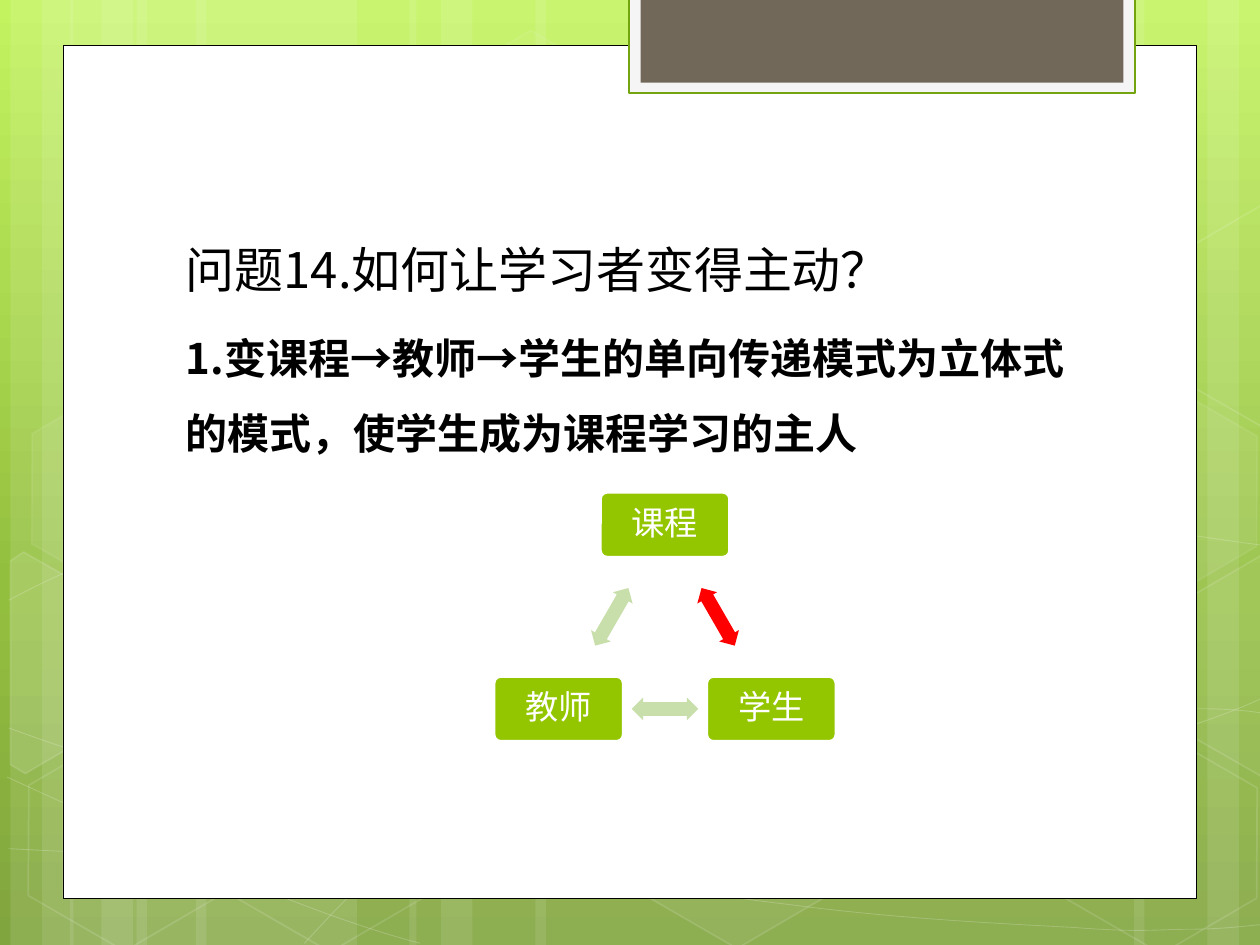
import math

import lxml.etree
import pptx
import pptx.dml.color
import pptx.enum.shapes
import pptx.enum.text
import pptx.oxml
import pptx.oxml.ns
import pptx.util

Pt = pptx.util.Pt
RGBColor = pptx.dml.color.RGBColor
SHAPE = pptx.enum.shapes.MSO_SHAPE
qn = pptx.oxml.ns.qn

WHITE = RGBColor(0xFF, 0xFF, 0xFF)
BLACK = RGBColor(0, 0, 0)
OFF_WHITE = RGBColor(0xF5, 0xF5, 0xF5)
TAUPE = RGBColor(0x71, 0x68, 0x5A)
DARK_GREEN = RGBColor(0x74, 0xA5, 0x10)
GREEN = RGBColor(0x94, 0xC6, 0x00)
PALE_GREEN = RGBColor(0xC8, 0xDF, 0xAB)
RED = RGBColor(0xFF, 0, 0)
SKY = [(0, RGBColor(0xC3, 0xF3, 0x5F)), (62, RGBColor(0x93, 0xBF, 0x3F)),
       (100, RGBColor(0x81, 0xA5, 0x3E))]
TEXT_FONT = "Noto Sans CJK SC"
NODE_FONT = "League Spartan"

BARS = [(78, 126), (6, 36), (24, 60), (112, 126), (40, 36), (58, 60),
        (528, 126), (690, 36), (648, 60), (306, 222), (234, 36), (252, 60)]
WAVES = [
    [(5, 485), (44, 487), (83, 489), (137, 488), (191, 487), (258, 486), (330, 479),
     (402, 472), (504, 458), (570, 444), (636, 431), (703, 409), (725, 397)],
    [(5, 343), (26, 332), (47, 321), (87, 310), (128, 300), (186, 284), (250, 279),
     (314, 274), (392, 273), (471, 279), (550, 284), (682, 307), (725, 312)],
    [(4, 444), (91, 484), (178, 523), (240, 539)],
    [(5, 416), (27, 424), (50, 432), (92, 444), (134, 454), (197, 472), (257, 485),
     (317, 497), (392, 510), (452, 517), (512, 525), (576, 528), (614, 530),
     (652, 533), (662, 531), (680, 531), (699, 531), (712, 529), (725, 528)],
    [(174, 539), (187, 525), (200, 510), (217, 498), (235, 485), (259, 470), (279, 460),
     (299, 450), (312, 446), (338, 438), (364, 431), (413, 421), (438, 416),
     (464, 411), (467, 411), (490, 410), (512, 407), (547, 405), (572, 405),
     (597, 404), (638, 405), (638, 405), (654, 405), (670, 405), (686, 405),
     (699, 405), (711, 406), (718, 407), (724, 408), (722, 407), (724, 408)],
]
HEXAGONS = [(240.5, 26, 4, 8), (358, 424, 6, 12), (8, 425.5, None, 12),
            (10, 224.5, 7, 8), (125.5, 426, None, 12), (542, 326, 10, 12),
            (600.5, 427, None, 12), (600.5, 226, 7, 8)]
CUT_HEXAGONS = [
    ([(6, 320.5), (13.5, 315.5), (69, 347), (68.5, 410.5), (14.5, 442), (6, 437)], 10),
    ([(666.5, 349), (720.5, 317.5), (726.5, 321), (726.5, 441.5), (721.5, 444),
      (666.5, 412.5)], 4),
    ([(666.5, 149), (720.5, 117.5), (727, 121), (726.5, 241), (721.5, 244),
      (666.5, 212.5)], None),
]


def set_alpha(fill, percent):
    for color in fill.iter(qn("a:srgbClr")):
        lxml.etree.SubElement(color, qn("a:alpha"), val=str(percent * 1000))


def paint(shape, fill=None, fill_alpha=100, line=None, width=1, line_alpha=100):
    shape.shadow.inherit = False
    if fill is None:
        shape.fill.background()
    else:
        shape.fill.solid()
        shape.fill.fore_color.rgb = fill
        if fill_alpha < 100:
            set_alpha(shape.fill._xPr.find(qn("a:solidFill")), fill_alpha)
    if line is None:
        shape.line.fill.background()
    else:
        shape.line.color.rgb = line
        shape.line.width = Pt(width)
        if line_alpha < 100:
            set_alpha(shape.line._ln, line_alpha)


def add_preset(page, kind, box, **style):
    shape = page.shapes.add_shape(kind, *(Pt(length) for length in box))
    paint(shape, **style)
    return shape


def add_outline(page, points, close, **style):
    points = [(round(x * 100), round(y * 100)) for x, y in points]
    builder = page.shapes.build_freeform(*points[0], scale=127)
    builder.add_line_segments(points[1:], close=close)
    shape = builder.convert_to_shape()
    paint(shape, **style)
    return shape


def add_wave(page, controls):
    wave = add_outline(page, controls, False, line=WHITE, width=0.5, line_alpha=20)
    segments = list(wave._element.iter(qn("a:lnTo")))
    outline = segments[0].getparent()
    for start in range(0, len(segments), 3):
        curve = lxml.etree.SubElement(outline, qn("a:cubicBezTo"))
        for segment in segments[start:start + 3]:
            curve.append(segment[0])
            outline.remove(segment)


def set_background(page):
    fill = page.background.fill
    fill.gradient()
    fill.gradient_angle = 270
    stops = page.background._cSld.find(".//" + qn("a:gsLst"))
    for stop in list(stops):
        stops.remove(stop)
    for position, color in SKY:
        stop = lxml.etree.SubElement(stops, qn("a:gs"), pos=str(position * 1000))
        lxml.etree.SubElement(stop, qn("a:srgbClr"), val=str(color))


def add_backdrop(page, box):
    left, top, width, height = box
    for offset, bar_width in BARS:
        add_preset(page, SHAPE.RECTANGLE, (left + offset, top, bar_width, height),
                   fill=WHITE, fill_alpha=10)
    for controls in WAVES:
        add_wave(page, [(left + x, top + y) for x, y in controls])
    for x, y, alpha, line_alpha in HEXAGONS:
        hexagon = add_preset(page, SHAPE.HEXAGON, (left + x, top + y, 126, 109.5),
                             fill=WHITE if alpha else None, fill_alpha=alpha or 100,
                             line=WHITE, line_alpha=line_alpha)
        hexagon.adjustments[0] = 0.285
        hexagon.rotation = 30
    for points, alpha in CUT_HEXAGONS:
        add_outline(page, [(left + x, top + y) for x, y in points], True,
                    fill=WHITE if alpha else None, fill_alpha=alpha or 100,
                    line=WHITE, line_alpha=12)


def add_tab(page, box):
    left, top, width, height = box
    margin = 6.75
    add_preset(page, SHAPE.RECTANGLE, box, fill=OFF_WHITE, line=DARK_GREEN, width=1.25)
    add_preset(page, SHAPE.RECTANGLE, (left + margin, top, width - 2 * margin, height - 6),
               fill=TAUPE)


def set_font(para, name, size, color, bold=False):
    para.font.name = name
    para.font.size = Pt(size)
    para.font.bold = bold
    para.font.color.rgb = color
    for span in para.runs:
        east_asian = lxml.etree.SubElement(span._r.get_or_add_rPr(), qn("a:ea"))
        east_asian.set("typeface", TEXT_FONT)


def add_body(page, box):
    title, body = page.placeholders
    title._element.getparent().remove(title._element)
    page.shapes._spTree.append(body._element)
    body.left, body.top, body.width, body.height = (Pt(length) for length in box)
    frame = body.text_frame
    frame.word_wrap = True
    frame.auto_size = pptx.enum.text.MSO_AUTO_SIZE.NONE
    frame.vertical_anchor = pptx.enum.text.MSO_ANCHOR.TOP
    frame.text = ("问题14.如何让学习者变得主动？\n"
                  "1.变课程→教师→学生的单向传递模式为立体式的模式，使学生成为课程学习的主人")
    for para, size, bold in zip(frame.paragraphs, (28, 24), (False, True)):
        para.line_spacing = 1.5
        para.space_before = Pt(size * 0.2)
        properties = para._p.get_or_add_pPr()
        properties.set("marL", str(Pt(5.5)))
        properties.set("indent", "0")
        lxml.etree.SubElement(properties, qn("a:buNone"))
        set_font(para, TEXT_FONT, size, BLACK, bold)


def add_cycle(page, box):
    left, top, width, height = box
    node_width, node_height = 73.5, 36.75
    arrow_width, arrow_height = 38, 13
    radius = (height - node_height) / 1.5
    center_x, center_y = left + width / 2, top + node_height / 2 + radius
    nodes = zip(("课程", "学生", "教师"), (RED, PALE_GREEN, PALE_GREEN))
    for index, (label, arrow_color) in enumerate(nodes):
        angle = math.radians(120 * index - 90)
        x, y = center_x + radius * math.cos(angle), center_y + radius * math.sin(angle)
        node = add_preset(page, SHAPE.ROUNDED_RECTANGLE,
                          (x - node_width / 2, y - node_height / 2, node_width, node_height),
                          fill=GREEN, line=WHITE, width=1.25)
        node.adjustments[0] = 0.1
        frame = node.text_frame
        frame.margin_left = frame.margin_right = Pt(5.75)
        frame.margin_top = frame.margin_bottom = Pt(5.75)
        frame.vertical_anchor = pptx.enum.text.MSO_ANCHOR.MIDDLE
        frame.text = label
        para = frame.paragraphs[0]
        para.alignment = pptx.enum.text.PP_ALIGN.CENTER
        para.line_spacing = 0.9
        set_font(para, NODE_FONT, 19, WHITE)

        middle = angle + math.radians(60)
        x = center_x + radius / 2 * math.cos(middle)
        y = center_y + radius / 2 * math.sin(middle)
        arrow = add_preset(page, SHAPE.LEFT_RIGHT_ARROW,
                           (x - arrow_width / 2, y - arrow_height / 2,
                            arrow_width, arrow_height), fill=arrow_color)
        arrow.adjustments[0] = 0.6
        arrow.rotation = 60 + 120 * index


def main():
    deck = pptx.Presentation()
    deck.slide_width, deck.slide_height = Pt(720), Pt(540)
    page = deck.slides.add_slide(deck.slide_layouts[1])
    set_background(page)
    add_backdrop(page, (0, 0, 720, 540))
    add_preset(page, SHAPE.RECTANGLE, (36, 26, 648, 487.25), fill=WHITE, line=BLACK, width=0.5)
    add_tab(page, (359.25, -1.5, 289.5, 54.75))
    add_body(page, (93.5, 116.5, 533.5, 276.5))
    add_cycle(page, (282.5, 281.5, 195, 142))
    deck.save("out.pptx")


if __name__ == "__main__":
    main()
